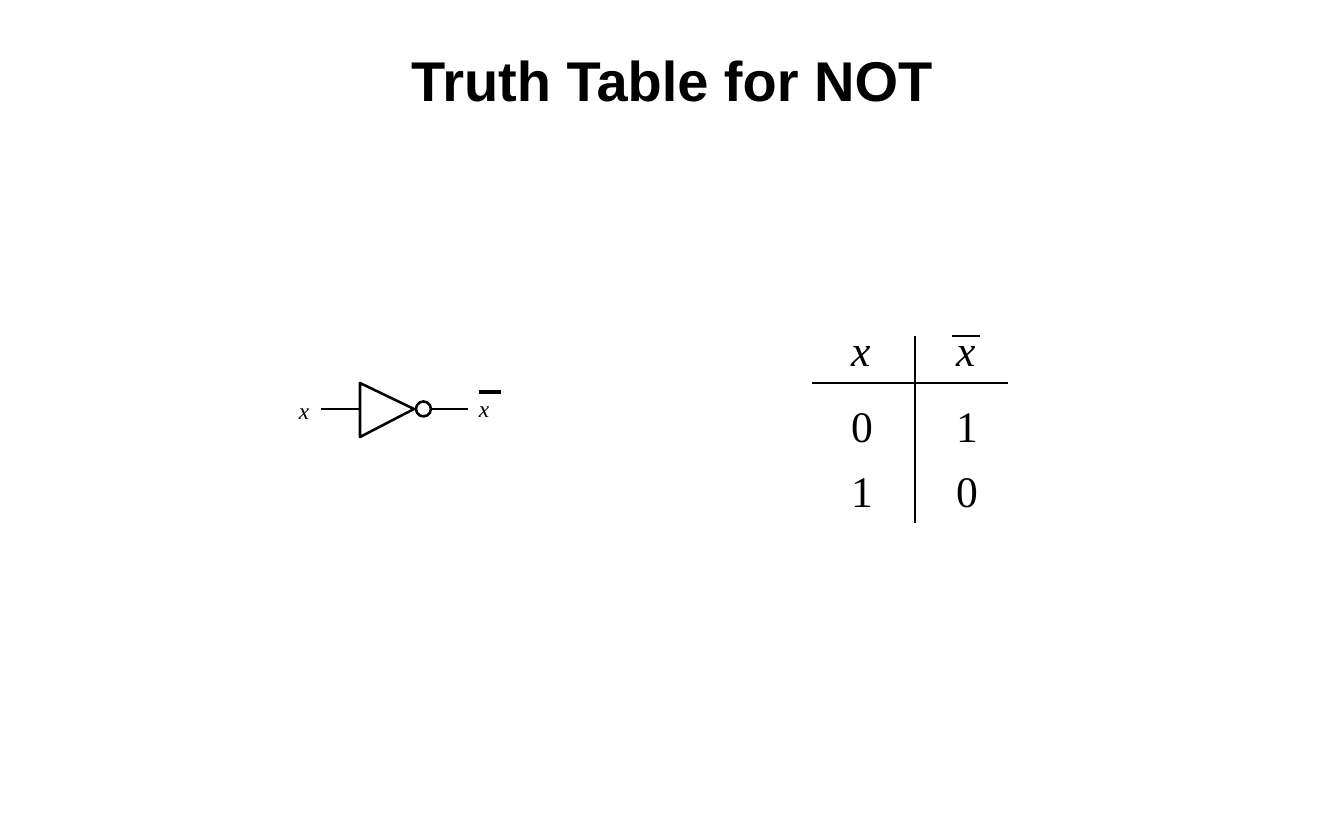
from dataclasses import dataclass

from lxml.etree import SubElement
from pptx import Presentation
from pptx.dml.color import RGBColor
from pptx.enum.shapes import MSO_CONNECTOR as CONN, MSO_SHAPE as SHAPE
from pptx.enum.text import MSO_ANCHOR as ANCHOR, PP_ALIGN as ALIGN
from pptx.oxml.ns import qn
from pptx.util import Inches, Pt


@dataclass(frozen=True)
class Theme:
    ink: RGBColor = RGBColor(0, 0, 0)
    title_font: str = "Arial"
    math_font: str = "Times New Roman"
    title_size: int = 36
    label_size: int = 15
    table_size: int = 28
    gate_line: float = 1.63
    gate_bar: float = 2
    table_bar: float = 1.25
    table_line: float = 0.75


THEME = Theme()


def px(n):
    return Inches(n / 112)


def format_run(r, font, size, bold=False, italic=False):
    f = r.font
    f.name, f.size, f.bold, f.italic = font, Pt(size), bold, italic
    f.color.rgb = THEME.ink


def add_line(shapes, x1, y1, x2, y2, width):
    c = shapes.add_connector(CONN.STRAIGHT, px(x1), px(y1), px(x2), px(y2))
    c.line.color.rgb = THEME.ink
    c.line.width = Pt(width)
    SubElement(c._element.spPr, qn("a:effectLst"))


def outline(sp):
    sp.shadow.inherit = False
    sp.fill.background()
    sp.line.color.rgb = THEME.ink
    sp.line.width = Pt(THEME.gate_line)


def add_symbol(shapes, x, y, w, h, text, size, inset=(0, 0)):
    """Place one variable or digit; letters are set in italics."""
    tf = shapes.add_textbox(px(x), px(y), px(w), px(h)).text_frame
    tf.word_wrap = True
    tf.margin_left = tf.margin_right = Inches(inset[0])
    tf.margin_top = tf.margin_bottom = Inches(inset[1])
    tf.text = text
    format_run(tf.paragraphs[0].runs[0], THEME.math_font, size,
               italic=text.isalpha())


def add_title(slide, x, y, w, h, text):
    sp = slide.shapes.title
    sp.left, sp.top, sp.width, sp.height = px(x), px(y), px(w), px(h)
    tf = sp.text_frame
    tf.text = text
    tf.vertical_anchor = ANCHOR.MIDDLE
    p = tf.paragraphs[0]
    p.alignment = ALIGN.CENTER
    format_run(p.runs[0], THEME.title_font, THEME.title_size, bold=True)


def add_not_gate(slide, x, y, w, h):
    shapes = slide.shapes.add_group_shape().shapes
    mid = y + 26
    back, tip = x + 61, x + 115
    bubble, d = x + 117, 15
    out = x + w - 22

    add_line(shapes, x + 22, mid, back, mid, THEME.gate_line)
    add_line(shapes, bubble + d, mid, out - 11, mid, THEME.gate_line)
    fb = shapes.build_freeform(px(tip), px(mid), scale=1.0)
    fb.add_line_segments([(px(back), px(y + h)), (px(back), px(y))], close=True)
    outline(fb.convert_to_shape())
    outline(shapes.add_shape(SHAPE.OVAL, px(bubble), px(mid - d / 2), px(d), px(d)))

    add_symbol(shapes, x, mid - 13, 18, 28, "x", THEME.label_size)
    add_symbol(shapes, out, mid - 15, 18, 28, "x", THEME.label_size)
    add_line(shapes, out, mid - 17, x + w, mid - 17, THEME.gate_bar)


def add_truth_table(slide, x, y, w, h):
    shapes = slide.shapes.add_group_shape().shapes
    add_line(shapes, x + 103, y, x + 103, y + h, THEME.table_line)
    add_line(shapes, x, y + 47, x + w, y + 47, THEME.table_line)

    columns = (x + 28, x + 133)
    row_tops = (y - 19, y + 57, y + 122)
    for top, row in zip(row_tops, ("xx", "01", "10")):
        for left, text in zip(columns, row):
            add_symbol(shapes, left, top, 45, 64, text, THEME.table_size,
                       inset=(0.1, 0.05))
    add_line(shapes, x + 140, y, x + 168, y, THEME.table_bar)


def main():
    prs = Presentation()
    prs.slide_width, prs.slide_height = Inches(12), Inches(7.5)
    slide = prs.slides.add_slide(prs.slide_layouts[5])
    add_title(slide, 112, 37, 1120, 84, "Truth Table for NOT")
    add_not_gate(slide, 299, 383, 202, 54)
    add_truth_table(slide, 812, 336, 196, 187)
    prs.save("out.pptx")


if __name__ == "__main__":
    main()
